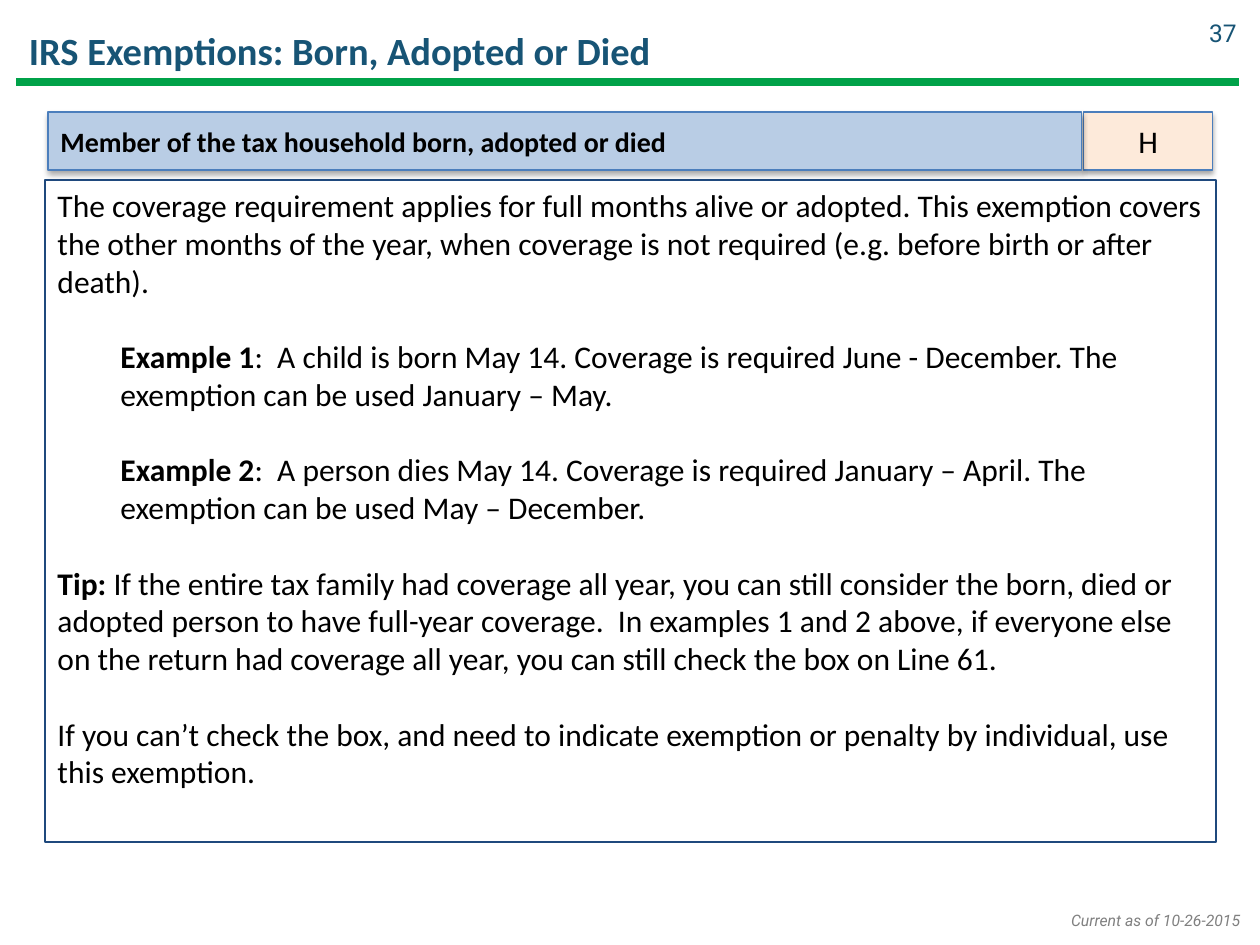
from dataclasses import dataclass

from lxml.etree import SubElement
from pptx import Presentation
from pptx.dml.color import RGBColor
from pptx.enum.shapes import MSO_CONNECTOR, MSO_SHAPE
from pptx.enum.text import MSO_ANCHOR, MSO_AUTO_SIZE, PP_ALIGN
from pptx.oxml import parse_xml
from pptx.oxml.ns import nsdecls, qn
from pptx.util import Cm, Pt


@dataclass(frozen=True)
class Theme:
    body_font: str = "Calibri"
    small_font: str = "Roboto"
    teal: str = "175475"
    green: str = "00A249"
    navy: str = "1F497D"
    edge: str = "4B7EBC"
    blue_fill: str = "B9CDE5"
    peach_fill: str = "FDEADA"
    black: str = "000000"
    grey: str = "808080"
    title_size: float = 22
    body_size: float = 18
    label_size: float = 16
    number_size: float = 14
    footer_size: float = 9
    paragraph_gap: float = 21.5


THEME = Theme()

# Each paragraph: indented or not, bold lead, plain text
PARAGRAPHS = [
    (False, "", "The coverage requirement applies for full months alive or adopted. "
     "This exemption covers the other months of the year, when coverage is not "
     "required (e.g. before birth or after death)."),
    (True, "Example 1", ":  A child is born May 14. Coverage is required "
     "June - December. The exemption can be used January – May."),
    (True, "Example 2", ":  A person dies May 14. Coverage is required "
     "January – April. The exemption can be used May – December."),
    (False, "Tip: ", "If the entire tax family had coverage all year, you can still "
     "consider the born, died or adopted person to have full-year coverage.  In "
     "examples 1 and 2 above, if everyone else on the return had coverage all year, "
     "you can still check the box on Line 61."),
    (False, "", "If you can’t check the box, and need to indicate exemption or "
     "penalty by individual, use this exemption."),
]


def style_run(r, size, color, font=THEME.body_font, bold=False, italic=False):
    r.font.name, r.font.size = font, Pt(size)
    r.font.bold, r.font.italic = bold, italic
    r.font.color.rgb = RGBColor.from_string(color)


def set_text(tf, text, size, color, align=PP_ALIGN.LEFT, anchor=MSO_ANCHOR.MIDDLE,
             **style):
    tf.word_wrap = True
    tf.auto_size = MSO_AUTO_SIZE.NONE
    tf.vertical_anchor = anchor
    tf.text = text
    p = tf.paragraphs[0]
    p.alignment = align
    style_run(p.runs[0], size, color, **style)


def add_box(s, left, top, width, height, line, weight, fill=None):
    sp = s.shapes.add_shape(MSO_SHAPE.RECTANGLE, Cm(left), Cm(top),
                            Cm(width), Cm(height))
    sp.shadow.inherit = False
    sp.line.color.rgb = RGBColor.from_string(line)
    sp.line.width = Pt(weight)
    if fill:
        sp.fill.solid()
        sp.fill.fore_color.rgb = RGBColor.from_string(fill)
    else:
        sp.fill.background()
    return sp


def add_shadow(sp):
    effects = sp._element.spPr.find(qn("a:effectLst"))
    effects.append(parse_xml(
        f'<a:outerShdw {nsdecls("a")} blurRad="{Pt(3.1)}" dist="{Pt(1.8)}" '
        f'dir="5400000" rotWithShape="0"><a:srgbClr val="{THEME.black}">'
        '<a:alpha val="35000"/></a:srgbClr></a:outerShdw>'))


def add_title_band(s, left, top, width, height):
    # Title
    title = s.shapes.title
    title.left, title.top = Cm(left), Cm(top)
    title.width, title.height = Cm(22.86), Cm(height)
    set_text(title.text_frame, "IRS Exemptions: Born, Adopted or Died",
             THEME.title_size, THEME.teal, bold=True)

    # Rule under the title
    y = Cm(top + 1.37)
    rule = s.shapes.add_connector(MSO_CONNECTOR.STRAIGHT, Cm(left), y,
                                  Cm(left + width), y)
    rule.line.color.rgb = RGBColor.from_string(THEME.green)
    rule.line.width = Pt(4.75)
    SubElement(rule._element.spPr, qn("a:effectLst"))

    # Page number
    number = s.shapes.add_textbox(Cm(left + 23.55), Cm(top - 0.13), Cm(1.3), Cm(1.02))
    set_text(number.text_frame, "37", THEME.number_size, THEME.teal,
             align=PP_ALIGN.RIGHT, font=THEME.small_font)


def add_exemption_header(s, left, top, width, height):
    code_width, gap = 2.59, 0.05
    label_width = width - code_width - gap
    code = add_box(s, left + label_width + gap, top, code_width, height,
                   THEME.edge, 0.75, THEME.peach_fill)
    set_text(code.text_frame, "H", THEME.body_size, THEME.black,
             align=PP_ALIGN.CENTER)
    label = add_box(s, left, top, label_width, height,
                    THEME.edge, 0.75, THEME.blue_fill)
    set_text(label.text_frame, "Member of the tax household born, adopted or died",
             THEME.label_size, THEME.black, bold=True)
    for sp in (code, label):
        add_shadow(sp)


def add_explanation(s, left, top, width, height):
    tf = add_box(s, left, top, width, height, THEME.navy, 1).text_frame
    tf.word_wrap = True
    tf.vertical_anchor = MSO_ANCHOR.TOP
    for i, (indented, lead, text) in enumerate(PARAGRAPHS):
        p = tf.add_paragraph() if i else tf.paragraphs[0]
        p.alignment = PP_ALIGN.LEFT
        if i:
            p.space_before = Pt(THEME.paragraph_gap)
        if indented:
            p.level = 1
            p._p.get_or_add_pPr().set("marL", str(Cm(1.27)))
        for part, bold in ((lead, True), (text, False)):
            if part:
                r = p.add_run()
                r.text = part
                style_run(r, THEME.body_size, THEME.black, bold=bold)


def add_footer(s, left, top, width, height):
    box = s.shapes.add_textbox(Cm(left), Cm(top), Cm(width), Cm(height))
    set_text(box.text_frame, "Current as of 10-26-2015", THEME.footer_size,
             THEME.grey, align=PP_ALIGN.RIGHT, anchor=MSO_ANCHOR.TOP,
             font=THEME.small_font, italic=True)


def main():
    prs = Presentation()
    prs.slide_width, prs.slide_height = Cm(25.4), Cm(19.05)
    s = prs.slides.add_slide(prs.slide_layouts[5])
    add_footer(s, 21.11, 18.24, 4.14, 0.64)
    add_title_band(s, 0.33, 0.28, 24.64, 1.45)
    add_exemption_header(s, 0.97, 2.26, 23.47, 1.17)
    add_explanation(s, 0.91, 3.63, 23.6, 13.34)
    prs.save("out.pptx")


if __name__ == "__main__":
    main()
